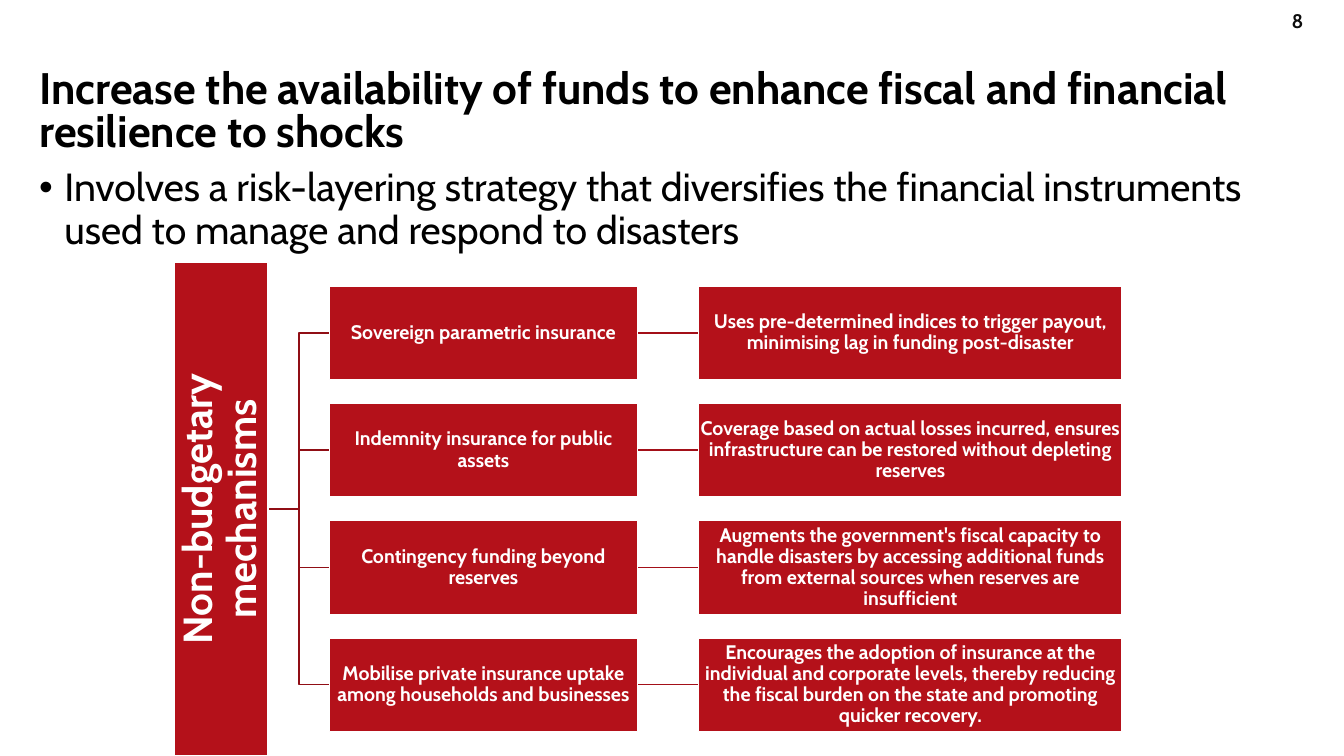
from pptx import Presentation
from pptx.dml.color import RGBColor
from pptx.enum.shapes import MSO_CONNECTOR, MSO_SHAPE
from pptx.enum.text import MSO_ANCHOR, PP_ALIGN
from pptx.oxml.ns import qn
from pptx.util import Cm, Pt
from lxml import etree

# Content
TITLE = ("Increase the availability of funds to enhance fiscal and financial "
         "resilience to shocks")
STRATEGY = ("Involves a risk-layering strategy that diversifies the financial "
            "instruments used to manage and respond to disasters")
PAGE_NUMBER = "8"
ROOT = "Non-budgetary mechanisms"
MECHANISMS = [
    ("Sovereign parametric insurance",
     "Uses pre-determined indices to trigger payout, minimising lag in funding "
     "post-disaster"),
    ("Indemnity insurance for public assets",
     "Coverage based on actual losses incurred, ensures infrastructure can be "
     "restored without depleting reserves"),
    ("Contingency funding beyond reserves",
     "Augments the government's fiscal capacity to handle disasters by accessing "
     "additional funds from external sources when reserves are insufficient"),
    ("Mobilise private insurance uptake among households and businesses",
     "Encourages the adoption of insurance at the individual and corporate levels, "
     "thereby reducing the fiscal burden on the state and promoting quicker recovery."),
]

# Style
FONT = "Cabin"
BLACK = RGBColor(0x00, 0x00, 0x00)
NEAR_BLACK = RGBColor(0x0D, 0x0D, 0x0D)
WHITE = RGBColor(0xFF, 0xFF, 0xFF)
RED = RGBColor(0xB4, 0x11, 0x1A)
BRANCH_RED = RGBColor(0x90, 0x0E, 0x15)
LINK_RED = RGBColor(0xA3, 0x0F, 0x18)
RECTANGLE = MSO_SHAPE.RECTANGLE
STRAIGHT, ELBOW = MSO_CONNECTOR.STRAIGHT, MSO_CONNECTOR.ELBOW
MIDDLE = MSO_ANCHOR.MIDDLE
LEFT, CENTER, RIGHT = PP_ALIGN.LEFT, PP_ALIGN.CENTER, PP_ALIGN.RIGHT

# Layout in centimetres
MARGIN, HEADING_WIDTH, HEADING_HEIGHT = 0.74, 32.33, 2.49
BOX_HEIGHT, ROW_PITCH, FIRST_ROW = 2.36, 2.955, 7.21
ROOT_LENGTH, ROOT_LEFT = 12.42, 4.4
GAP = 1.55
NAME_LEFT, NAME_WIDTH = ROOT_LEFT + BOX_HEIGHT + GAP, 7.75
DETAIL_LEFT, DETAIL_WIDTH = NAME_LEFT + NAME_WIDTH + GAP, 10.67
TREE_MIDDLE = FIRST_ROW + ((len(MECHANISMS) - 1) * ROW_PITCH + BOX_HEIGHT) / 2


def write(shape, text, size, color, align, bold=True, spacing=None):
    frame = shape.text_frame
    frame.word_wrap = True
    frame.text = text
    para = frame.paragraphs[0]
    para.alignment = align
    para.line_spacing = spacing
    font = para.runs[0].font
    font.name, font.size, font.bold = FONT, Pt(size), bold
    font.color.rgb = color
    return para


def add_box(slide, left, top, width, text, size=14, inset=0.03):
    box = slide.shapes.add_shape(RECTANGLE, Cm(left), Cm(top), Cm(width), Cm(BOX_HEIGHT))
    box.shadow.inherit = False
    box.fill.solid()
    box.fill.fore_color.rgb = RED
    box.line.color.rgb = WHITE
    box.line.width = Pt(1)
    frame = box.text_frame
    frame.margin_left = frame.margin_right = Cm(inset)
    frame.margin_top = frame.margin_bottom = Cm(inset)
    frame.vertical_anchor = MIDDLE
    write(box, text, size, WHITE, CENTER, spacing=0.9)
    return box


def add_line(slide, kind, start, end, color):
    line = slide.shapes.add_connector(kind, *(Cm(value) for value in start + end))
    line.line.color.rgb = color
    line.line.width = Pt(1)
    etree.SubElement(line._element.spPr, qn("a:effectLst"))


def add_headings(slide):
    # Page number
    number = slide.shapes.add_textbox(Cm(31.6), Cm(0), Cm(1.5), Cm(1.02))
    number.text_frame.vertical_anchor = MIDDLE
    write(number, PAGE_NUMBER, 14, NEAR_BLACK, RIGHT)

    # Title
    title = slide.shapes.title
    title.left, title.top = Cm(MARGIN), Cm(1.6)
    title.width, title.height = Cm(HEADING_WIDTH), Cm(HEADING_HEIGHT)
    title.text_frame.vertical_anchor = MIDDLE
    write(title, TITLE, 31.5, BLACK, LEFT, spacing=Pt(30.8))

    # Bulleted statement
    body = slide.shapes.add_textbox(Cm(MARGIN), Cm(4.11), Cm(HEADING_WIDTH), Cm(HEADING_HEIGHT))
    para = write(body, STRATEGY, 28, BLACK, LEFT, bold=False, spacing=0.9)
    properties = para._p.get_or_add_pPr()
    properties.set("marL", str(Cm(0.635)))
    properties.set("indent", str(-Cm(0.635)))
    etree.SubElement(properties, qn("a:buFont")).set("typeface", "Arial")
    etree.SubElement(properties, qn("a:buChar")).set("char", "•")


def add_tree(slide):
    tops = [FIRST_ROW + row * ROW_PITCH for row in range(len(MECHANISMS))]

    # Branches and links, behind the boxes
    for top in tops:
        middle = top + BOX_HEIGHT / 2
        add_line(slide, ELBOW, (NAME_LEFT - GAP, TREE_MIDDLE), (NAME_LEFT, middle), BRANCH_RED)
        add_line(slide, STRAIGHT, (DETAIL_LEFT - GAP, middle), (DETAIL_LEFT, middle), LINK_RED)

    # Root, turned to read upwards
    root_left = ROOT_LEFT + (BOX_HEIGHT - ROOT_LENGTH) / 2
    root = add_box(slide, root_left, TREE_MIDDLE - BOX_HEIGHT / 2, ROOT_LENGTH, ROOT, 29, 0.05)
    root.rotation = 270

    # Mechanisms and what they do
    for top, (name, detail) in zip(tops, MECHANISMS):
        add_box(slide, NAME_LEFT, top, NAME_WIDTH, name)
        add_box(slide, DETAIL_LEFT, top, DETAIL_WIDTH, detail)


def main():
    deck = Presentation()
    deck.slide_width, deck.slide_height = Cm(33.87), Cm(19.05)
    slide = deck.slides.add_slide(deck.slide_layouts[5])
    add_headings(slide)
    add_tree(slide)
    deck.save("out.pptx")


if __name__ == "__main__":
    main()
